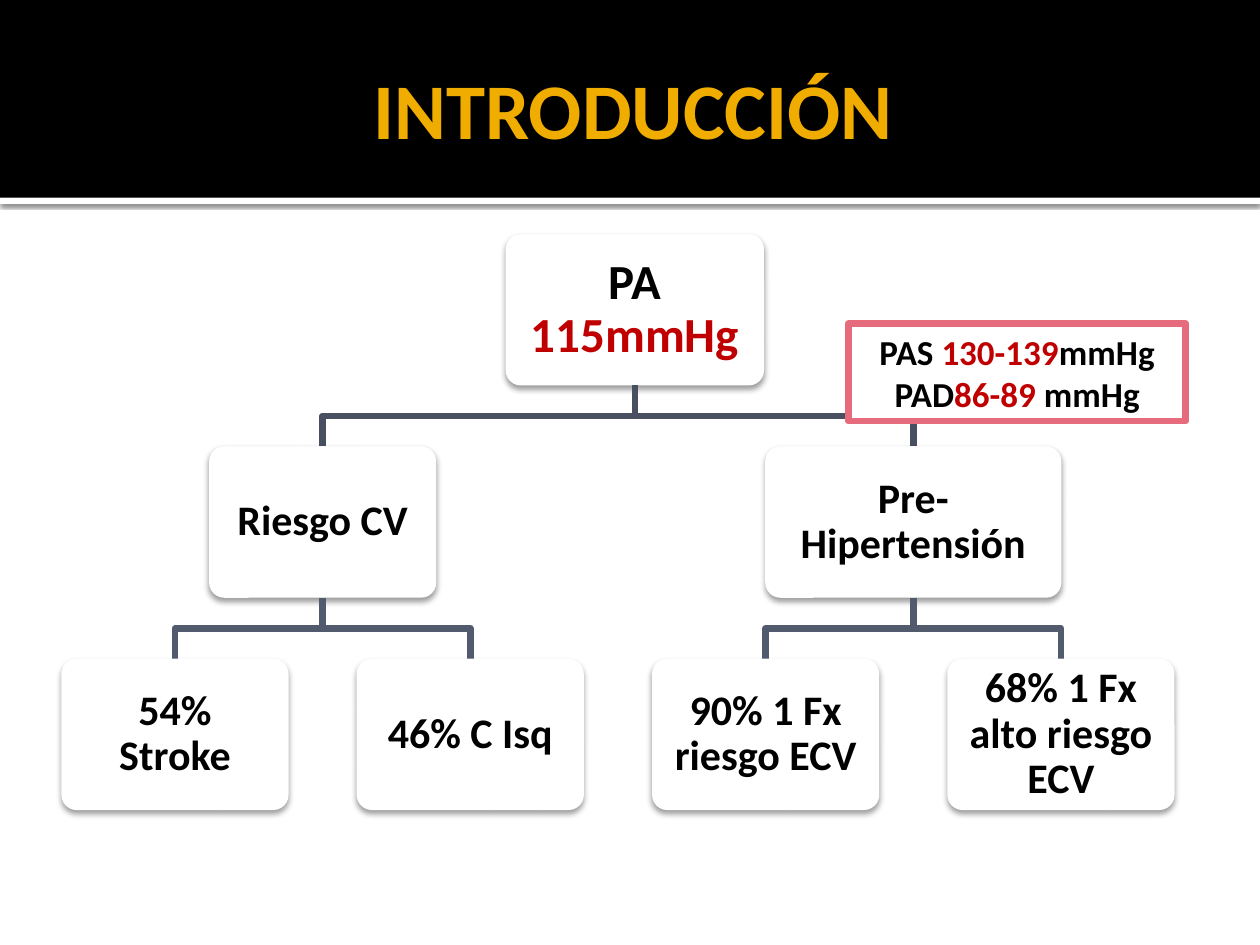
from pptx import Presentation
from pptx.dml.color import RGBColor
from pptx.enum.shapes import MSO_SHAPE as SHAPE
from pptx.enum.text import MSO_ANCHOR as ANCHOR, PP_ALIGN as ALIGN
from pptx.oxml import parse_xml
from pptx.oxml.ns import nsdecls
from pptx.util import Pt

COLORS = {"black": "000000", "white": "FFFFFF", "gold": "F0AD00", "red": "C00000",
          "pink": "E66C7D", "trunk": "484F60", "branch": "525A6D"}


class Deck:
    font = "Calibri"
    line_width = 3.78
    node_height = 86.5

    def __init__(self, width, height):
        self.prs = Presentation()
        self.prs.slide_width, self.prs.slide_height = Pt(width), Pt(height)
        self.slide = self.prs.slides.add_slide(self.prs.slide_layouts[6])

    def color(self, name):
        return RGBColor.from_string(COLORS[name])

    def shape(self, kind, x, y, w, h, fill, line=None):
        sp = self.slide.shapes.add_shape(kind, Pt(x), Pt(y), Pt(w), Pt(h))
        sp.shadow.inherit = False
        sp.fill.solid()
        sp.fill.fore_color.rgb = self.color(fill)
        if line:
            self.outline(sp, line)
        else:
            sp.line.fill.background()
        return sp

    def outline(self, sp, color):
        sp.line.color.rgb = self.color(color)
        sp.line.width = Pt(self.line_width)

    def shadow(self, sp, alpha, blur, dist):
        """Cast a black shadow straight down; alpha is in percent."""
        effects = sp._element.spPr.find("{*}effectLst")
        effects.append(parse_xml(
            f'<a:outerShdw {nsdecls("a")} blurRad="{Pt(blur)}" dist="{Pt(dist)}" '
            f'dir="5400000" rotWithShape="0"><a:srgbClr val="{COLORS["black"]}">'
            f'<a:alpha val="{alpha * 1000}"/></a:srgbClr></a:outerShdw>'))

    def text(self, sp, runs, size, insets=(7.2, 3.6, 7.2, 3.6), spacing=None):
        """Write bold centred (text, color) runs; insets are left, top, right, bottom."""
        tf = sp.text_frame
        tf.word_wrap = True
        tf.vertical_anchor = ANCHOR.MIDDLE
        tf.margin_left, tf.margin_top, tf.margin_right, tf.margin_bottom = map(Pt, insets)
        p = tf.paragraphs[0]
        p.alignment = ALIGN.CENTER
        p.font.name, p.font.size, p.font.bold = self.font, Pt(size), True
        if spacing:
            p.line_spacing = spacing
        for content, color in runs:
            r = p.add_run()
            r.text = content
            r.font.color.rgb = self.color(color)

    def title(self, content, x, y, w, h):
        sp = self.slide.shapes.add_textbox(Pt(x), Pt(y), Pt(w), Pt(h))
        self.text(sp, [(content, "gold")], 45, (7.2, 3.6, 3.6, 3.6))

    def node(self, center, top, width, runs, size=24, inset=7.2):
        sp = self.shape(SHAPE.ROUNDED_RECTANGLE, center - width / 2, top,
                        width, self.node_height, "white")
        sp.adjustments[0] = 0.1
        self.shadow(sp, 38, 3.5, 2)
        self.text(sp, runs, size, (inset,) * 4, 0.9)

    def elbow(self, x1, y1, x2, y2, color):
        """Draw a down-across-down link that bends halfway."""
        mid = (y1 + y2) / 2
        path = self.slide.shapes.build_freeform(Pt(x1), Pt(y1))
        path.add_line_segments([(Pt(x1), Pt(mid)), (Pt(x2), Pt(mid)), (Pt(x2), Pt(y2))],
                               close=False)
        sp = path.convert_to_shape()
        sp.shadow.inherit = False
        sp.fill.background()
        self.outline(sp, color)


def main():
    deck = Deck(720, 540)
    rule = deck.shape(SHAPE.RECTANGLE, 0, 113, 720, 3.6, "white")
    deck.shadow(rule, 60, 2.5, 0.8)
    deck.shape(SHAPE.RECTANGLE, 0, 0, 720, 113, "black")
    deck.title("INTRODUCCIÓN", 36, 12.2, 648, 98.6)

    levels = [133.8 + 121.3 * i for i in range(3)]
    bottoms = [top + deck.node_height for top in levels]
    leaf_centers = [100 + 168.75 * i for i in range(4)]
    leaf_width = 129.8
    groups = [("Riesgo CV", leaf_width, ["54% Stroke", "46% C Isq"]),
              ("Pre-Hipertensión", 169.2,
               ["90% 1 Fx riesgo ECV", "68% 1 Fx alto riesgo ECV"])]

    root = 362.8
    deck.node(root, levels[0], 147.6, [("PA", "black"), (" 115mmHg", "red")], 28, 8.6)
    for i, (label, width, leaves) in enumerate(groups):
        centers = leaf_centers[2 * i:2 * i + 2]
        center = sum(centers) / 2
        deck.elbow(root, bottoms[0], center, levels[1], "trunk")
        deck.node(center, levels[1], width, [(label, "black")])
        for x, leaf in zip(centers, leaves):
            deck.elbow(center, bottoms[1], x, levels[2], "branch")
            deck.node(x, levels[2], leaf_width, [(leaf, "black")])

    note = deck.shape(SHAPE.RECTANGLE, 484.8, 185, 192.8, 55.7, "white", "pink")
    deck.text(note, [("PAS ", "black"), ("130-139", "red"), ("mmHg PAD", "black"),
                     ("86-89 ", "red"), ("mmHg", "black")], 20)
    deck.prs.save("out.pptx")


if __name__ == "__main__":
    main()
